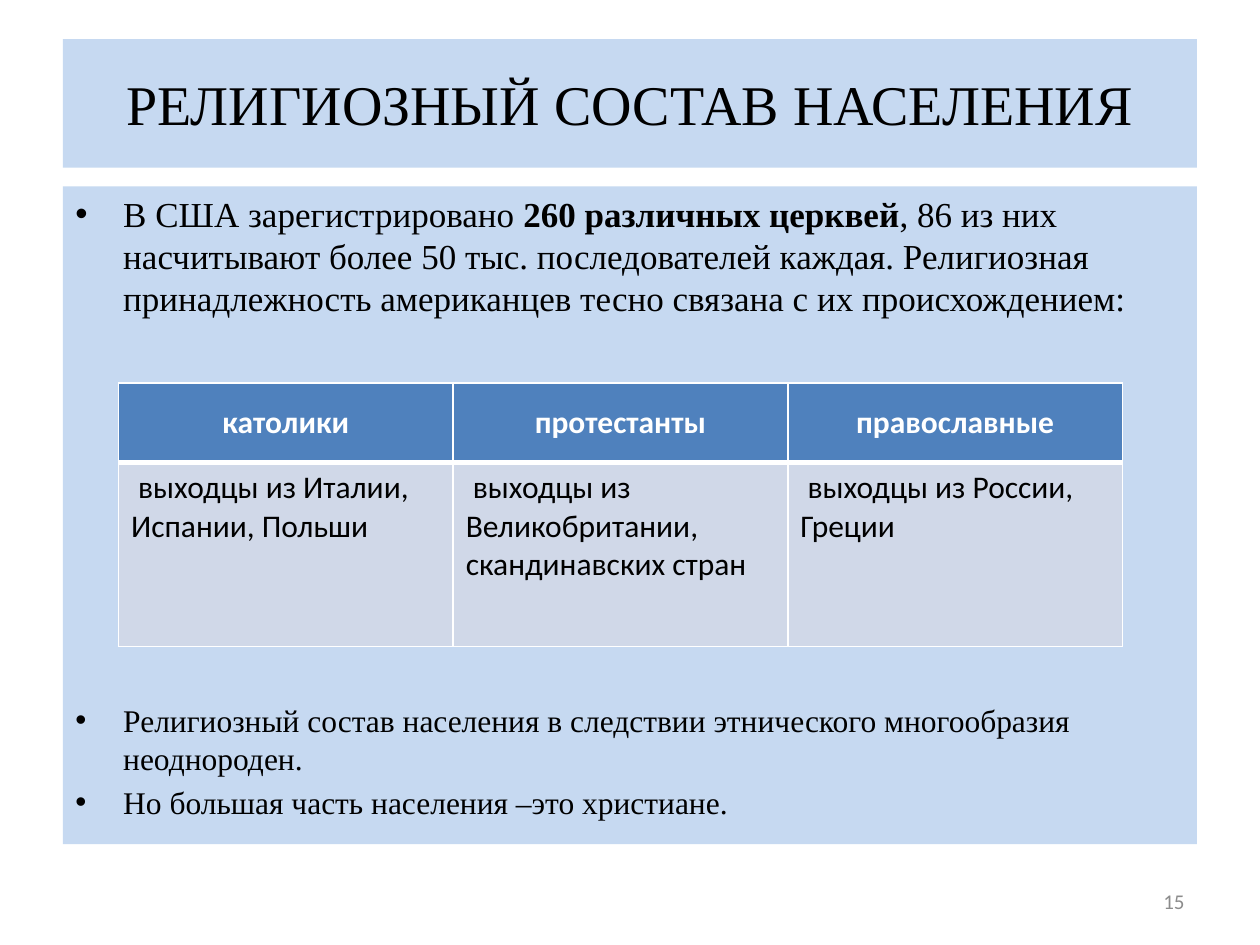
"""Build a slide on the religious composition of the US population."""
from lxml import etree
from pptx import Presentation
from pptx import util as u
from pptx.dml.color import RGBColor
from pptx.enum import shapes, text
from pptx.oxml.ns import qn

COLORS = {
    "panel": "C6D9F1", "head": "4F81BD", "body": "D0D8E8",
    "white": "FFFFFF", "black": "000000", "gray": "8C8C8C",
}
SERIF, SANS = "Times New Roman", "Calibri"
ALIGN, ANCHOR = text.PP_ALIGN, text.MSO_ANCHOR

TITLE = "РЕЛИГИОЗНЫЙ СОСТАВ НАСЕЛЕНИЯ"
BULLETS = [
    (20, {"line_spacing": u.Pt(24)}, [
        ("В США зарегистрировано ", False),
        ("260 различных церквей", True),
        (", 86 из них насчитывают более 50 тыс. последователей каждая. "
         "Религиозная принадлежность американцев тесно связана с их "
         "происхождением:", False)]),
    (18, {"line_spacing": u.Pt(22), "space_before": u.Pt(218)}, [
        ("Религиозный состав населения в следствии этнического "
         "многообразия неоднороден.", False)]),
    (18, {"line_spacing": u.Pt(22), "space_before": u.Pt(3)}, [
        ("Но большая часть населения –это христиане.", False)]),
]
GROUPS = [
    ("католики", "протестанты", "православные"),
    (" выходцы из Италии, Испании, Польши",
     " выходцы из Великобритании, скандинавских стран",
     " выходцы из России, Греции"),
]


def rgb(name):
    return RGBColor.from_string(COLORS[name])


def set_attrs(obj, values):
    for name, value in values.items():
        setattr(obj, name, value)


def add_run(p, words, size, font=SERIF, color="black", bold=False):
    r = p.add_run()
    r.text = words
    set_attrs(r.font, {"size": u.Pt(size), "name": font, "bold": bold})
    r.font.color.rgb = rgb(color)


def add_panel(s, top, height, anchor):
    sp = s.shapes.add_shape(shapes.MSO_SHAPE.RECTANGLE, u.Inches(0.5),
                            u.Inches(top), u.Inches(9), u.Inches(height))
    sp.shadow.inherit = False
    sp.fill.solid()
    sp.fill.fore_color.rgb = rgb("panel")
    sp.line.fill.background()
    set_attrs(sp.text_frame, {"word_wrap": True, "vertical_anchor": anchor})
    return sp.text_frame


def add_bullet(p, size, spacing, runs):
    set_attrs(p, {"alignment": ALIGN.LEFT, **spacing})
    for words, bold in runs:
        add_run(p, words, size, bold=bold)
    pPr = p._p.get_or_add_pPr()
    pPr.set("marL", str(u.Inches(0.38)))
    pPr.set("indent", str(u.Inches(-0.38)))
    etree.SubElement(pPr, qn("a:buFont"), typeface="Arial")
    etree.SubElement(pPr, qn("a:buChar"), char="•")


def set_borders(cell, widths):
    tcPr = cell._tc.get_or_add_tcPr()
    for i, (side, width) in enumerate(widths.items()):
        ln = etree.Element(qn(f"a:ln{side}"), w=str(u.Pt(width)))
        fill = etree.SubElement(ln, qn("a:solidFill"))
        etree.SubElement(fill, qn("a:srgbClr"), val=COLORS["white"])
        tcPr.insert(i, ln)


def add_table(s):
    table = s.shapes.add_table(2, 3, u.Inches(0.94), u.Inches(3.04),
                               u.Inches(7.97), u.Inches(2.09)).table
    for row, height in zip(table.rows, (0.63, 1.46)):
        row.height = u.Inches(height)
    for i, words_row in enumerate(GROUPS):
        head = i == 0
        for j, words in enumerate(words_row):
            cell = table.cell(i, j)
            cell.fill.solid()
            cell.fill.fore_color.rgb = rgb("head" if head else "body")
            cell.vertical_anchor = ANCHOR.MIDDLE if head else ANCHOR.TOP
            p = cell.text_frame.paragraphs[0]
            p.alignment = ALIGN.CENTER if head else ALIGN.LEFT
            add_run(p, words, 18, SANS, "white" if head else "black", head)
            set_borders(cell, {"L": 1, "R": 1, "T": 1 if head else 3,
                               "B": 3 if head else 1})


def add_page_number(s, number):
    tf = s.shapes.add_textbox(u.Inches(7.17), u.Inches(6.95),
                              u.Inches(2.33), u.Inches(0.4)).text_frame
    set_attrs(tf, {"word_wrap": True, "vertical_anchor": ANCHOR.MIDDLE})
    p = tf.paragraphs[0]
    p.alignment = ALIGN.RIGHT
    add_run(p, number, 12, SANS, "gray")


def main():
    prs = Presentation()
    set_attrs(prs, {"slide_width": u.Inches(10), "slide_height": u.Inches(7.5)})
    s = prs.slides.add_slide(prs.slide_layouts[6])
    p = add_panel(s, 0.31, 1.02, ANCHOR.MIDDLE).paragraphs[0]
    p.alignment = ALIGN.CENTER
    add_run(p, TITLE, 32)
    tf = add_panel(s, 1.48, 5.22, ANCHOR.TOP)
    for i, bullet in enumerate(BULLETS):
        add_bullet(tf.add_paragraph() if i else tf.paragraphs[0], *bullet)
    add_table(s)
    add_page_number(s, "15")
    prs.save("out.pptx")


if __name__ == "__main__":
    main()
